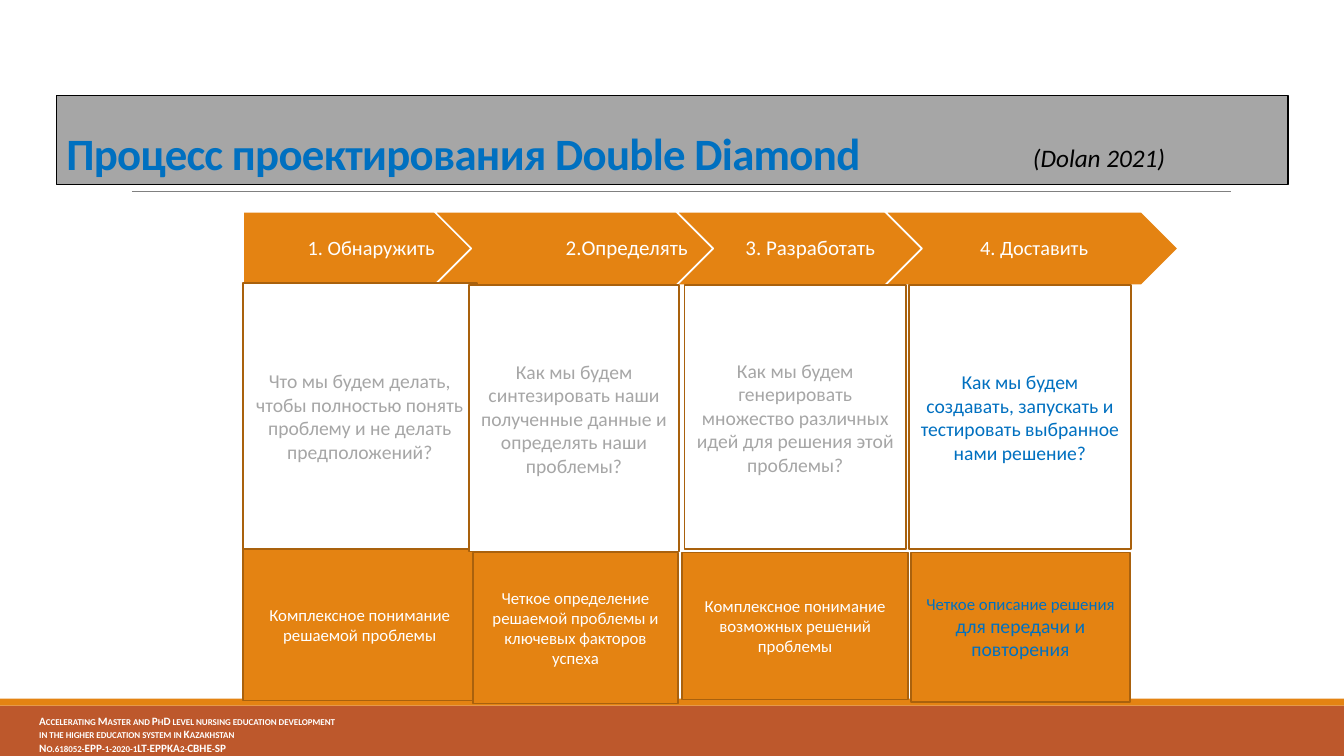
from lxml import etree
from pptx import Presentation
from pptx.dml.color import RGBColor
from pptx.enum import shapes, text
from pptx.oxml import ns
from pptx.util import Pt

WHITE = RGBColor(0xFF, 0xFF, 0xFF)
BLACK = RGBColor(0, 0, 0)
GREY = RGBColor(0xA6, 0xA6, 0xA6)
RULE = RGBColor(0x80, 0x80, 0x80)
BLUE = RGBColor(0x00, 0x70, 0xC0)
ORANGE = RGBColor(0xE4, 0x83, 0x12)
BROWN = RGBColor(0xA9, 0x61, 0x0D)
RUST = RGBColor(0xBD, 0x58, 0x2C)
KIND = shapes.MSO_SHAPE
ANCHOR = text.MSO_ANCHOR
ALIGN = text.PP_ALIGN


class Deck:
    font = "Calibri"

    def __init__(self, width, height):
        self.prs = Presentation()
        self.prs.slide_width, self.prs.slide_height = Pt(width), Pt(height)
        self.s = self.prs.slides.add_slide(self.prs.slide_layouts[6])

    def shape(self, box, fill, line=None, weight=1.25, kind=KIND.RECTANGLE):
        sp = self.s.shapes.add_shape(kind, *map(Pt, box))
        sp.shadow.inherit = False
        sp.fill.solid()
        sp.fill.fore_color.rgb = fill
        if line is None:
            sp.line.fill.background()
        else:
            sp.line.color.rgb = line
            sp.line.width = Pt(weight)
        return sp

    def textbox(self, box):
        return self.s.shapes.add_textbox(*map(Pt, box))

    def rule(self, x1, y1, x2, y2, color, weight):
        c = self.s.shapes.add_connector(
            shapes.MSO_CONNECTOR.STRAIGHT, Pt(x1), Pt(y1), Pt(x2), Pt(y2))
        c.line.color.rgb = color
        c.line.width = Pt(weight)
        etree.SubElement(c._element.spPr, ns.qn("a:effectLst"))

    def label(self, sp, paragraphs, color, frame=None, para=None, font=None, extra=None):
        tf = sp.text_frame
        frame = {"word_wrap": True, "vertical_anchor": ANCHOR.MIDDLE, **(frame or {})}
        for key, value in frame.items():
            setattr(tf, key, value)
        for i, runs in enumerate(paragraphs):
            p = tf.paragraphs[0] if i == 0 else tf.add_paragraph()
            for key, value in {"alignment": ALIGN.CENTER, **(para or {})}.items():
                setattr(p, key, value)
            for words, size in runs:
                r = p.add_run()
                r.text = words
                values = {"name": self.font, "size": Pt(size), **(font or {})}
                for key, value in values.items():
                    setattr(r.font, key, value)
                r.font.color.rgb = color
                for key, value in (extra or {}).items():
                    r._r.get_or_add_rPr().set(key, value)


STAGES = [
    ("1. Обнаружить", 14.5, 173.5, 193, KIND.PENTAGON),
    ("2.Определять", 15, 310.3, 271.4, KIND.CHEVRON),
    ("3. Разработать", 15, 483.1, 187.9, KIND.CHEVRON),
    ("4. Доставить", 14.5, 632.2, 209.5, KIND.CHEVRON),
]
RESULTS = [
    ((173.5, 392.4, 167, 108), WHITE, [("Комплексное понимание решаемой проблемы", 12)]),
    ((337.7, 394.6, 146.9, 108), WHITE,
     [("Четкое определение решаемой проблемы и ключевых факторов успеха", 12)]),
    ((487.4, 394.6, 161.3, 105.1), WHITE,
     [("Комплексное понимание возможных решений проблемы", 12)]),
    ((650.9, 394.6, 156.2, 106.6), BLUE,
     [("Четкое описание решения ", 12), ("для передачи и повторения", 14)]),
]
QUESTIONS = [
    ((173.5, 202.3, 167, 190.1), GREY,
     "Что мы будем делать, чтобы полностью понять проблему и не делать предположений?"),
    ((334.8, 203.8, 150.5, 190.1), GREY,
     "Как мы будем синтезировать наши полученные данные и определять наши проблемы?"),
    ((488.9, 203.8, 158.4, 188.6), GREY,
     "Как мы будем генерировать множество различных идей для решения этой проблемы?"),
    ((649.4, 203.8, 158.4, 188.6), BLUE,
     "Как мы будем создавать, запускать и тестировать выбранное нами решение?"),
]
FOOTER = [
    "Accelerating Master and PhD level nursing education development",
    "in the higher education system in Kazakhstan",
    "No.618052-EPP-1-2020-1LT-EPPKA2-CBHE-SP",
]


def main():
    d = Deck(960, 540)
    left = {"alignment": ALIGN.LEFT}
    top = {"vertical_anchor": ANCHOR.TOP}
    d.shape((0, 504, 960, 36), RUST)
    d.shape((0, 499, 960, 5), ORANGE)
    d.rule(94.3, 136.8, 879.1, 136.8, RULE, 0.5)
    d.label(d.textbox((20.9, 506.6, 330.5, 36)), [[(line, 8)] for line in FOOTER], WHITE,
            top, left, {"bold": True}, {"cap": "small"})

    d.label(d.shape((40.3, 68.4, 879.8, 63.4), GREY, BLACK, 1),
            [[("Процесс проектирования Double Diamond", 32)]], BLUE,
            {"vertical_anchor": ANCHOR.BOTTOM}, {**left, "line_spacing": 0.85},
            {"bold": True}, {"spc": "-50"})
    d.label(d.textbox((730.8, 97.9, 200, 29)), [[("(Dolan 2021)", 18)]], BLACK,
            top, left, {"italic": True})

    insets = {"margin_left": Pt(5), "margin_right": Pt(1.5),
              "margin_top": Pt(3), "margin_bottom": Pt(3)}
    for name, size, x, width, kind in STAGES:
        sp = d.shape((x, 151.2, width, 52.6), ORANGE, WHITE, kind=kind)
        d.label(sp, [[(name, size)]], WHITE, insets, {"line_spacing": 0.9})
    for box, color, runs in RESULTS:
        d.label(d.shape(box, ORANGE, BROWN), [runs], color)
    for box, color, question in QUESTIONS:
        d.label(d.shape(box, WHITE, BROWN), [[(question, 14)]], color)
    d.prs.save("out.pptx")


if __name__ == "__main__":
    main()
